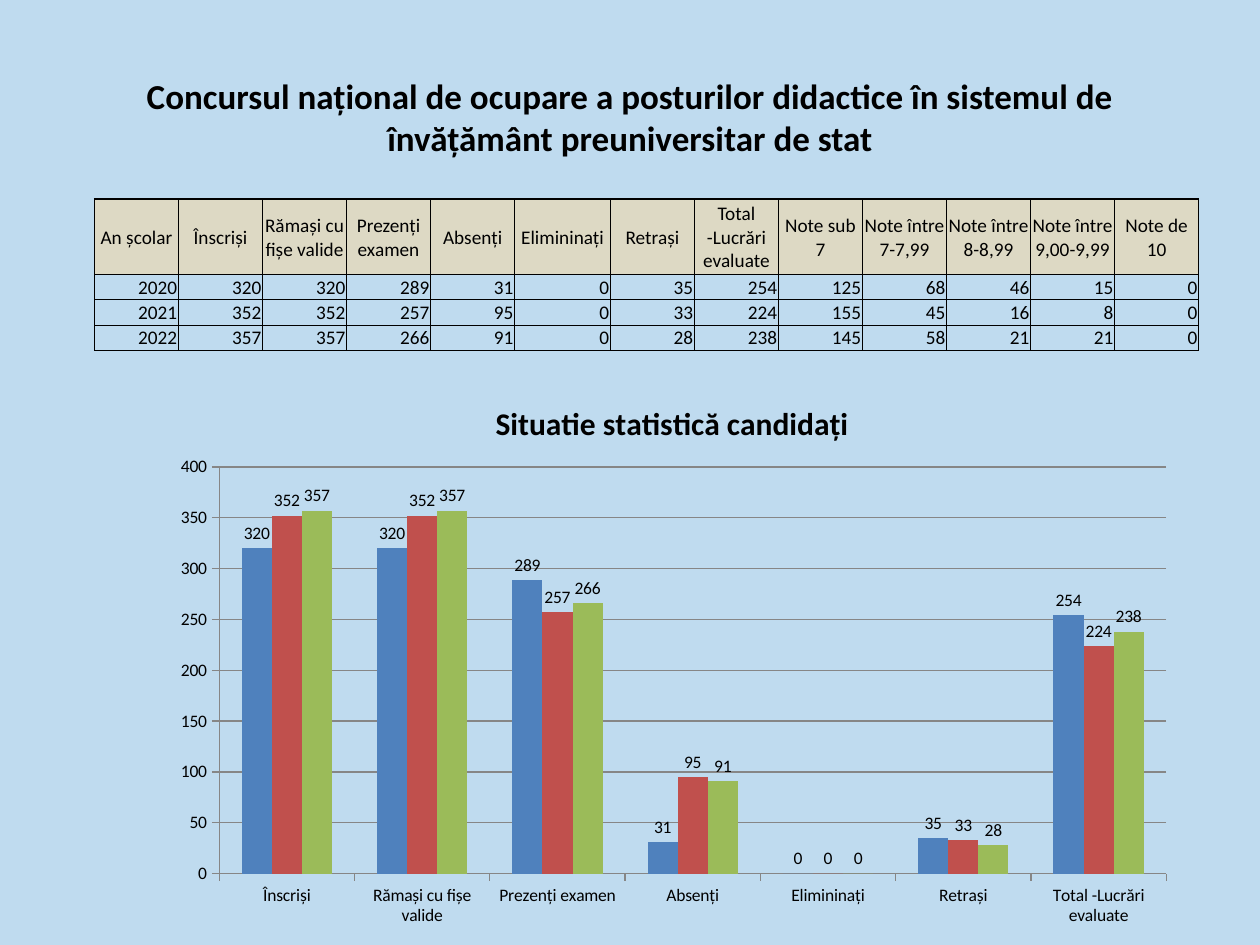
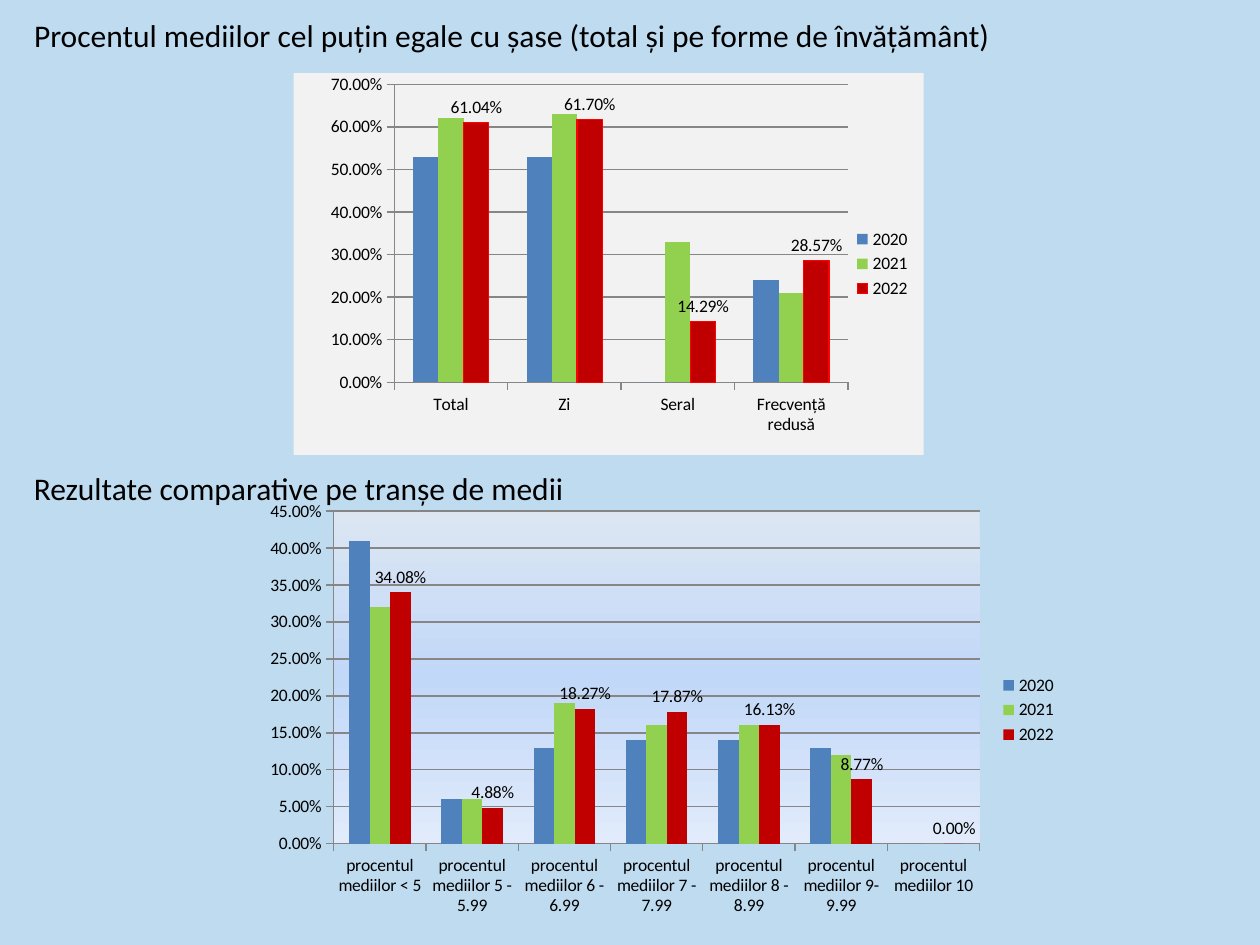
import pptx
import pptx.chart.data
import pptx.dml.color
import pptx.enum.chart
import pptx.enum.text
import pptx.oxml
import pptx.oxml.ns
import pptx.util
from dataclasses import dataclass

Inches = pptx.util.Inches
Pt = pptx.util.Pt
ALIGN = pptx.enum.text.PP_ALIGN
ANCHOR = pptx.enum.text.MSO_ANCHOR
NS = pptx.oxml.ns.nsdecls("a", "c")


@dataclass(frozen=True)
class Theme:
    font: str = "Calibri"
    background: str = "BFDBEF"
    text: str = "000000"
    header: str = "DDD9C4"
    panel: str = "F2F2F2"
    axis: str = "868686"
    outline: str = "FF0000"
    candidates: tuple = ("4F81BD", "C0504D", "9BBB59")
    years: tuple = ("4F81BD", "92D050", "C00000")
    gradient: tuple = ((0, "DCE6F2"), (50, "C2D8F8"), (100, "E1EBFB"))
    title: int = 20
    heading: int = 18
    table: int = 11
    chart: int = 10


THEME = Theme()
YEARS = ("2020", "2021", "2022")
PERCENT = "0.00%"

HEADERS = ["An școlar", "Înscriși", "Rămași cu fișe valide", "Prezenți examen",
           "Absenți", "Elimininați", "Retrași", "Total -Lucrări evaluate",
           "Note sub 7", "Note între 7-7,99", "Note între 8-8,99",
           "Note între 9,00-9,99", "Note de 10"]
RESULTS = [
    (320, 320, 289, 31, 0, 35, 254, 125, 68, 46, 15, 0),
    (352, 352, 257, 95, 0, 33, 224, 155, 45, 16, 8, 0),
    (357, 357, 266, 91, 0, 28, 238, 145, 58, 21, 21, 0),
]
CHARTED = 7

FORMS = ["Total", "Zi", "Seral", "Frecvență redusă"]
FORM_RATES = [
    (0.53, 0.53, 0, 0.24),
    (0.62, 0.63, 0.33, 0.21),
    (0.6104, 0.617, 0.1429, 0.2857),
]
BANDS = ["procentul mediilor " + band for band in (
    "< 5", "5 - 5.99", "6 - 6.99", "7 - 7.99", "8 - 8.99", "9- 9.99", "10")]
BAND_RATES = [
    (0.41, 0.06, 0.13, 0.14, 0.14, 0.13, 0),
    (0.32, 0.06, 0.19, 0.16, 0.16, 0.12, 0),
    (0.3408, 0.0488, 0.1827, 0.1787, 0.1613, 0.0877, 0),
]


def rgb(color):
    return pptx.dml.color.RGBColor.from_string(color)


def style_font(font, size, bold=False):
    font.name = THEME.font
    font.size = Pt(size)
    font.bold = bold
    font.color.rgb = rgb(THEME.text)


def write_text(tf, text, size, align, bold=False):
    tf.text = text
    p = tf.paragraphs[0]
    p.alignment = align
    style_font(p.runs[0].font, size, bold)


def place(sp, box):
    sp.left, sp.top, sp.width, sp.height = map(Inches, box)


def add_title(slide, box, text, size, align, bold=False):
    sp = slide.shapes.title
    place(sp, box)
    tf = sp.text_frame
    tf.auto_size = pptx.enum.text.MSO_AUTO_SIZE.NONE
    tf.vertical_anchor = ANCHOR.MIDDLE
    write_text(tf, text, size, align, bold)


def add_heading(slide, box, text):
    tf = slide.shapes.add_textbox(*map(Inches, box)).text_frame
    tf.word_wrap = True
    write_text(tf, text, THEME.heading, ALIGN.LEFT)


def set_borders(cell, is_header):
    tcPr = cell._tc.get_or_add_tcPr()
    for side in "LRTB":
        width = Pt(1 if is_header and side != "B" else 0.5)
        tcPr.append(pptx.oxml.parse_xml(
            f'<a:ln{side} {NS} w="{width}"><a:solidFill>'
            f'<a:srgbClr val="{THEME.text}"/></a:solidFill></a:ln{side}>'))


def fill_cell(cell, text, is_header):
    cell.margin_left = cell.margin_right = cell.margin_top = Inches(0.01)
    cell.margin_bottom = 0
    cell.vertical_anchor = ANCHOR.MIDDLE
    write_text(cell.text_frame, text, THEME.table,
               ALIGN.CENTER if is_header else ALIGN.RIGHT)
    set_borders(cell, is_header)
    if is_header:
        cell.fill.solid()
        cell.fill.fore_color.rgb = rgb(THEME.header)
    else:
        cell.fill.background()


def add_results_table(slide, box):
    rows = [HEADERS] + [(year, *values) for year, values in zip(YEARS, RESULTS)]
    table = slide.shapes.add_table(len(rows), len(HEADERS), *map(Inches, box)).table
    table.first_row = table.horz_banding = False
    for header, column in zip(HEADERS, table.columns):
        column.width = Inches(0.76 if header == "Elimininați" else 0.667)
    for i, values in enumerate(rows):
        table.rows[i].height = Inches(0.2 if i else 0.6)
        for j, value in enumerate(values):
            fill_cell(table.cell(i, j), str(value), i == 0)


def solid_xml(color):
    return f'<a:solidFill><a:srgbClr val="{color}"/></a:solidFill>'


def gradient_xml(stops):
    gs = "".join(f'<a:gs pos="{pos * 1000}"><a:srgbClr val="{color}"/></a:gs>'
                 for pos, color in stops)
    return f'<a:gradFill><a:gsLst>{gs}</a:gsLst><a:lin ang="5400000" scaled="0"/></a:gradFill>'


def area_format(fill):
    return pptx.oxml.parse_xml(
        f'<c:spPr {NS}>{fill}<a:ln><a:noFill/></a:ln></c:spPr>')


def set_areas(chart, inner, chart_fill, plot_fill):
    chart_el = chart._chartSpace.chart
    chart_el.addnext(area_format(chart_fill))
    area = chart_el.plotArea
    for layout in area.findall(pptx.oxml.ns.qn("c:layout")):
        area.remove(layout)
    sizes = "".join(f'<c:{key} val="{value}"/>' for key, value in zip("xywh", inner))
    area.insert(0, pptx.oxml.parse_xml(
        f'<c:layout {NS}><c:manualLayout><c:layoutTarget val="inner"/>'
        f'<c:xMode val="edge"/><c:yMode val="edge"/>{sizes}'
        f'</c:manualLayout></c:layout>'))
    area.append(area_format(plot_fill))


def style_axes(chart, maximum, step, number_format):
    axis = chart.value_axis
    axis.minimum_scale, axis.maximum_scale, axis.major_unit = 0, maximum, step
    axis.has_major_gridlines = True
    axis.tick_labels.number_format = number_format
    axis.tick_labels.number_format_is_linked = False
    for ax in (axis, chart.category_axis):
        ax.major_tick_mark = pptx.enum.chart.XL_TICK_MARK.OUTSIDE
        ax.format.line.color.rgb = rgb(THEME.axis)
        ax.format.line.width = Pt(0.75)
    axis.major_gridlines.format.line.color.rgb = rgb(THEME.axis)
    axis.major_gridlines.format.line.width = Pt(0.75)


def label_series(series, number_format):
    labels = series.data_labels
    labels.show_value = True
    labels.number_format = number_format
    labels.number_format_is_linked = False
    labels.position = pptx.enum.chart.XL_LABEL_POSITION.OUTSIDE_END
    style_font(labels.font, THEME.chart)


def add_columns(slide, box, categories, names, values, colors, labelled, scale,
                inner, number_format="General", title=None,
                chart_fill="<a:noFill/>", plot_fill="<a:noFill/>"):
    data = pptx.chart.data.CategoryChartData(number_format=number_format)
    data.categories = categories
    for name, row in zip(names, values):
        data.add_series(name, row)
    chart = slide.shapes.add_chart(
        pptx.enum.chart.XL_CHART_TYPE.COLUMN_CLUSTERED, *map(Inches, box), data).chart
    style_font(chart.font, THEME.chart)
    chart.has_title = title is not None
    if title:
        write_text(chart.chart_title.text_frame, title, THEME.heading, ALIGN.CENTER, True)
        chart.chart_title.include_in_layout = False
    chart.has_legend = title is None
    if chart.has_legend:
        chart.legend.position = pptx.enum.chart.XL_LEGEND_POSITION.RIGHT
        chart.legend.include_in_layout = False
    plot = chart.plots[0]
    plot.gap_width = 150
    plot.vary_by_categories = False
    for series, color in zip(plot.series, colors):
        series.invert_if_negative = False
        series.format.fill.solid()
        series.format.fill.fore_color.rgb = rgb(color)
        if series.name in labelled:
            label_series(series, number_format)
    style_axes(chart, *scale, number_format)
    set_areas(chart, inner, chart_fill, plot_fill)
    return chart


def build_contest_slide(slide):
    add_title(slide, (0.5, 0.3, 9, 1.25),
              "Concursul național de ocupare a posturilor didactice în sistemul "
              "de învățământ preuniversitar de stat", THEME.title, ALIGN.CENTER, True)
    add_results_table(slide, (0.75, 1.58, 8.76, 1.2))
    names = ["Series 1", "Series 2", "Series 3"]
    add_columns(slide, (1.25, 3, 8.17, 4.42), HEADERS[1:CHARTED + 1], names,
                [row[:CHARTED] for row in RESULTS], THEME.candidates, names,
                (400, 50), (0.06, 0.16, 0.92, 0.73),
                title="Situatie statistică candidați")


def build_averages_slide(slide):
    add_title(slide, (0.17, 0.08, 9.17, 0.4),
              "Procentul mediilor cel puțin egale cu șase (total și pe forme de "
              "învățământ)", THEME.heading, ALIGN.LEFT)
    chart = add_columns(slide, (2.33, 0.58, 5, 3.03), FORMS, YEARS, FORM_RATES,
                        THEME.years, YEARS[-1:], (0.7, 0.1),
                        (0.16, 0.03, 0.72, 0.78), PERCENT,
                        chart_fill=solid_xml(THEME.panel))
    line = chart.plots[0].series[-1].format.line
    line.color.rgb = rgb(THEME.outline)
    line.width = Pt(0.75)
    add_columns(slide, (2, 3.92, 6.49, 3.43), BANDS, YEARS, BAND_RATES,
                THEME.years, YEARS[-1:], (0.45, 0.05),
                (0.1, 0.04, 0.79, 0.77), PERCENT,
                plot_fill=gradient_xml(THEME.gradient))
    add_heading(slide, (0.17, 3.67, 4.46, 0.4), "Rezultate comparative pe tranșe de medii")


def main():
    prs = pptx.Presentation()
    prs.slide_width, prs.slide_height = Inches(10), Inches(7.5)
    fill = prs.slide_master.background.fill
    fill.solid()
    fill.fore_color.rgb = rgb(THEME.background)
    title_only = prs.slide_layouts.get_by_name("Title Only")
    for build in (build_contest_slide, build_averages_slide):
        build(prs.slides.add_slide(title_only))
    prs.save("out.pptx")


if __name__ == "__main__":
    main()
